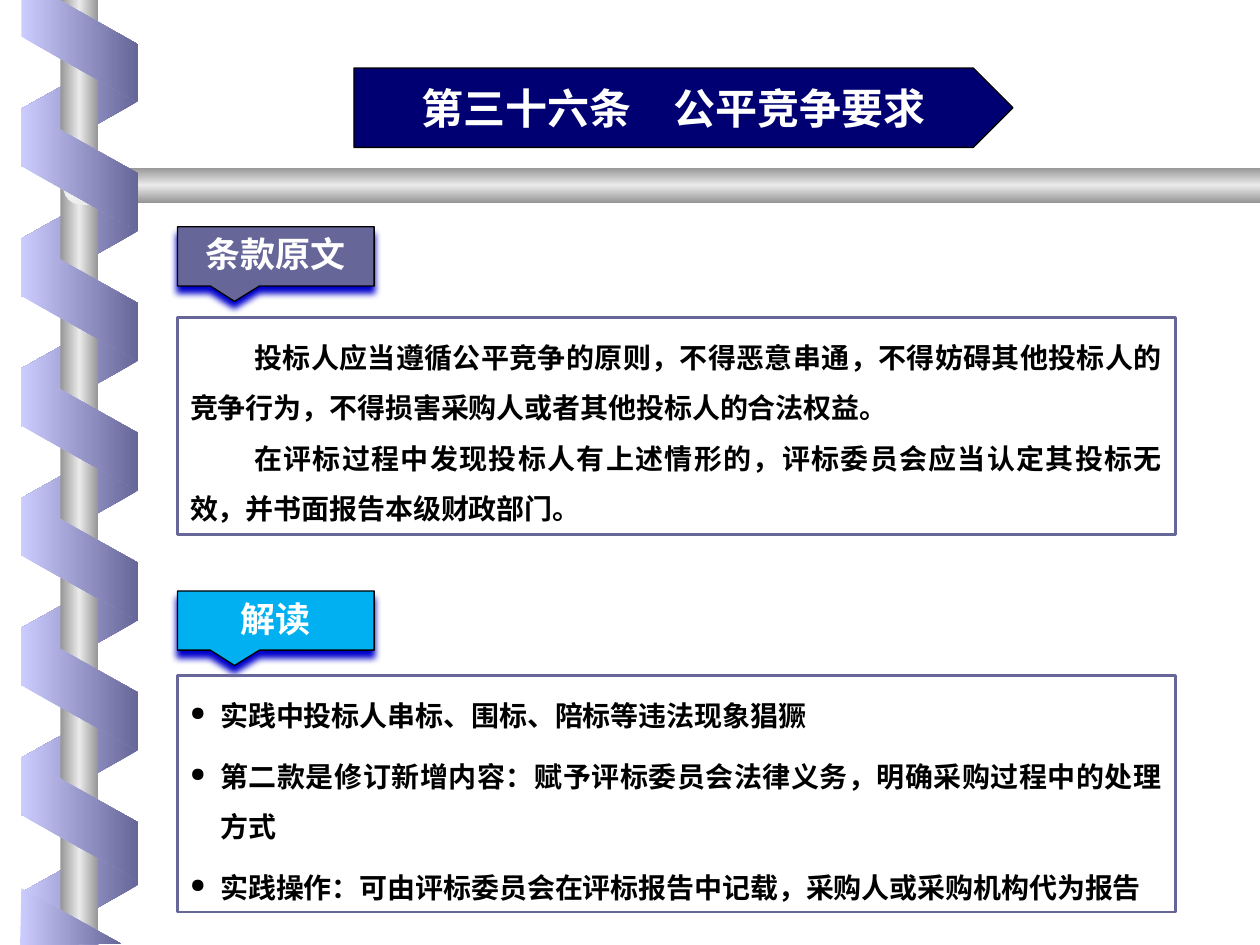
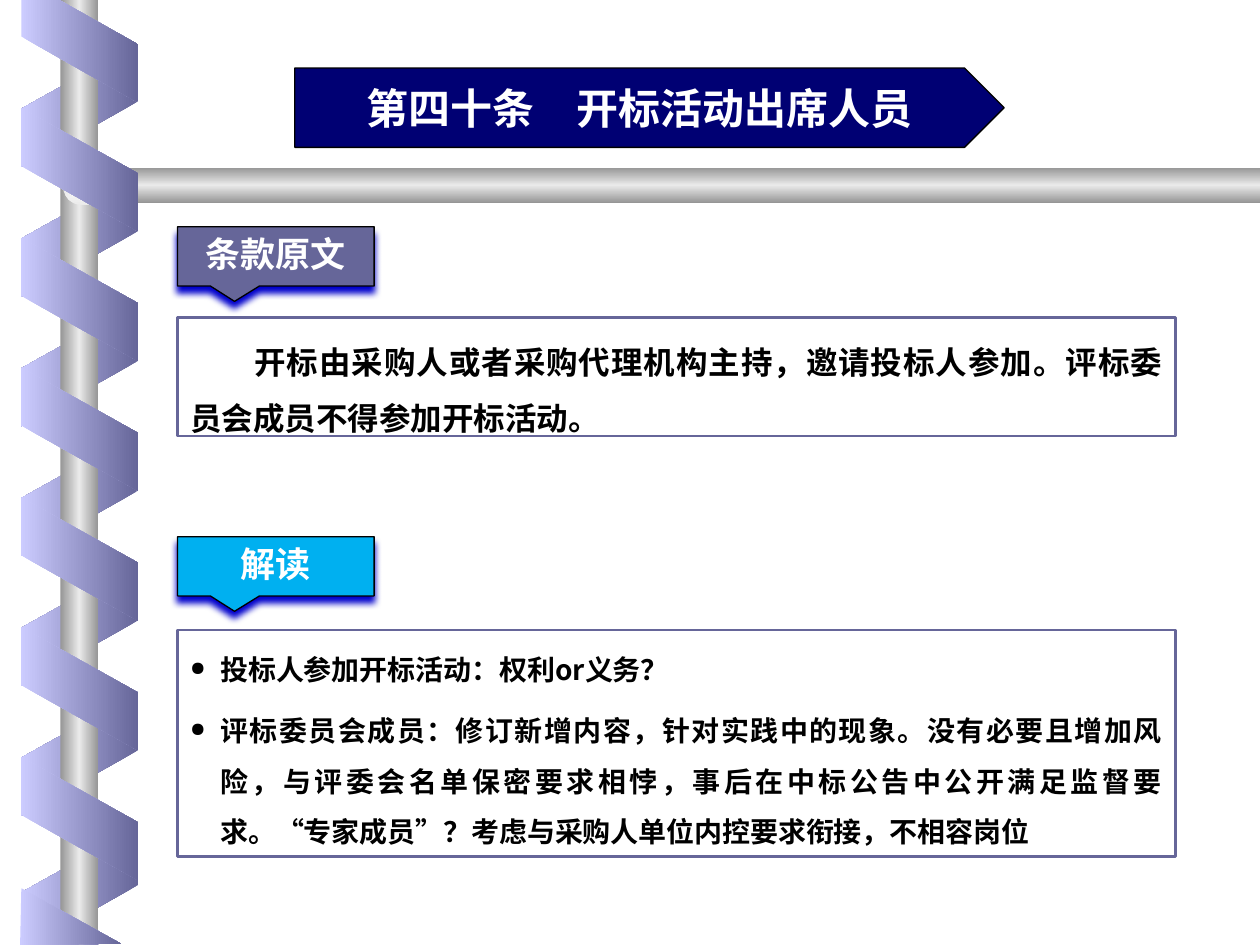
from lxml import etree
from pptx import Presentation
from pptx.dml.color import RGBColor
from pptx.enum.shapes import MSO_SHAPE
from pptx.enum.text import MSO_ANCHOR, MSO_AUTO_SIZE, PP_ALIGN
from pptx.oxml.ns import qn
from pptx.util import Inches, Pt

RECT = MSO_SHAPE.RECTANGLE
ELLIPSE = MSO_SHAPE.OVAL
PARALLELOGRAM = MSO_SHAPE.PARALLELOGRAM
ARROW_BANNER = MSO_SHAPE.PENTAGON
CALLOUT = MSO_SHAPE.RECTANGULAR_CALLOUT
TOP, MIDDLE = MSO_ANCHOR.TOP, MSO_ANCHOR.MIDDLE
CENTER, JUSTIFY = PP_ALIGN.CENTER, PP_ALIGN.JUSTIFY
GROW = MSO_AUTO_SIZE.SHAPE_TO_FIT_TEXT

CJK_FONT = "Noto Sans CJK SC"
TITLE_FONT = "Times New Roman"
WHITE, BLACK = "FFFFFF", "000000"
NAVY, PURPLE, LILAC, CYAN = "000073", "666699", "CCCCFF", "00B0F0"
SHADOW = "0000CC"
METAL = ["969696", "EAEAEA", "969696"]
PEARL = ["FEFFFF", "EAEAEA"]
FRONT_RIBBON = [LILAC, PURPLE]
BACK_RIBBON = [PURPLE, LILAC]

BOX_LEFT, BOX_WIDTH = 1.41, 7.92
RIBBON_PITCH = 1.03
RIBBON_TOP_END = [(0.17, 0), (0.17, 0.29), (1.09, 0.81), (1.09, 0.35), (0.47, 0)]
RIBBON_BOTTOM_END = [(0.96, 7.49), (0.17, 7.05), (0.16, 7.5)]


def rgb(value):
    return RGBColor.from_string(value)


def sub(parent, tag, **attrs):
    return etree.SubElement(parent, qn(tag), {k: str(v) for k, v in attrs.items()})


def gradient(sp, colors, angle=0, radial=False):
    sp.shadow.inherit = False
    sp.line.fill.background()
    sp.fill.background()
    spPr = sp._element.spPr
    grad = etree.Element(qn("a:gradFill"), rotWithShape="0")
    stops = sub(grad, "a:gsLst")
    for i, color in enumerate(colors):
        stop = sub(stops, "a:gs", pos=100000 * i // (len(colors) - 1))
        sub(stop, "a:srgbClr", val=color)
    if radial:
        center = sub(grad, "a:path", path="shape")
        sub(center, "a:fillToRect", l=50000, t=50000, r=50000, b=50000)
    else:
        sub(grad, "a:lin", ang=angle * 60000, scaled=1)
    spPr.replace(spPr.find(qn("a:noFill")), grad)


def add_shape(s, kind, left, top, width, height, adj=()):
    sp = s.shapes.add_shape(kind, Inches(left), Inches(top), Inches(width), Inches(height))
    sp.shadow.inherit = False
    for i, value in enumerate(adj):
        sp.adjustments[i] = value
    return sp


def flip(sp):
    sp._element.spPr.find(qn("a:xfrm")).set("flipH", "1")


def add_ribbon_turn(s, top, front):
    sp = add_shape(s, PARALLELOGRAM, 0.14, top, 0.98, 0.93, [0.56])
    sp.rotation = 270 if front else 90
    if not front:
        flip(sp)
    gradient(sp, FRONT_RIBBON if front else BACK_RIBBON)


def add_ribbon_end(s, points):
    corners = [(Inches(x), Inches(y)) for x, y in points]
    builder = s.shapes.build_freeform(*corners[0])
    builder.add_line_segments(corners[1:], close=True)
    gradient(builder.convert_to_shape(), FRONT_RIBBON)


def add_spiral_frame(s):
    for i in range(6):
        add_ribbon_turn(s, 0.37 + i * RIBBON_PITCH, front=False)
    add_ribbon_turn(s, 6.59, front=False)
    gradient(add_shape(s, RECT, 0.48, 0, 0.3, 7.5), METAL)
    rod = add_shape(s, ARROW_BANNER, 0.6, 1.33, 9.4, 0.28, [0.59])
    flip(rod)
    gradient(rod, METAL, 90)
    gradient(add_shape(s, ELLIPSE, 0.5, 1.33, 0.32, 0.3), PEARL, radial=True)
    for i in range(6):
        add_ribbon_turn(s, 0.88 + i * RIBBON_PITCH, front=True)
    add_ribbon_end(s, RIBBON_TOP_END)
    add_ribbon_end(s, RIBBON_BOTTOM_END)


def style(p, align, size, color, font):
    p.alignment = align
    for r in p.runs:
        r.font.size = Pt(size)
        r.font.bold = True
        r.font.name = font
        r.font.color.rgb = rgb(color)
        sub(r._r.get_or_add_rPr(), "a:ea", typeface=CJK_FONT)


def add_label(s, kind, box, adj, fill, text, size, anchor):
    sp = add_shape(s, kind, *box, adj)
    sp.fill.solid()
    sp.fill.fore_color.rgb = rgb(fill)
    sp.line.color.rgb = rgb(BLACK)
    sp.line.width = Pt(0.75)
    tf = sp.text_frame
    tf.text = text
    tf.vertical_anchor = anchor
    style(tf.paragraphs[0], CENTER, size, WHITE, TITLE_FONT)
    return sp


def add_title(s, text, left, width):
    add_label(s, ARROW_BANNER, (left, 0.54, width, 0.63), [0.5], NAVY, text, 24, MIDDLE)


def add_callout(s, text, top, fill):
    sp = add_label(s, CALLOUT, (BOX_LEFT, top, 1.56, 0.47), [-0.21, 0.76], fill, text, 20, TOP)
    effects = sp._element.spPr.find(qn("a:effectLst"))
    shadow = sub(effects, "a:outerShdw", blurRad=Pt(4), dist=Pt(4), dir=90 * 60000,
                 algn="ctr", rotWithShape=0)
    sub(shadow, "a:srgbClr", val=SHADOW)


def add_text_box(s, top, height, lines, size=16, bullets=False):
    sp = add_shape(s, RECT, BOX_LEFT, top, BOX_WIDTH, height)
    sp.fill.background()
    sp.line.color.rgb = rgb(PURPLE)
    sp.line.width = Pt(1.5)
    tf = sp.text_frame
    tf.word_wrap = True
    tf.auto_size = GROW
    tf.vertical_anchor = TOP
    tf.text = "\n".join(lines)
    for p in tf.paragraphs:
        style(p, JUSTIFY, size, BLACK, CJK_FONT)
        p.line_spacing = 1.5
        pPr = p._p.get_or_add_pPr()
        margin, indent = (0.24, -0.24) if bullets else (0, 0.51)
        pPr.set("marL", str(Inches(margin)))
        pPr.set("indent", str(Inches(indent)))
        pPr.set("hangingPunct", "0")
        if bullets:
            p.space_before = Pt(6)
            sub(pPr, "a:buSzPct", val=70000)
            sub(pPr, "a:buChar", char="●")


def add_article_slide(prs, title, title_left, title_width, clause, notes_callout_top, notes):
    s = prs.slides.add_slide(prs.slide_layouts[6])
    add_spiral_frame(s)
    add_text_box(s, 2.52, **clause)
    add_title(s, title, title_left, title_width)
    add_callout(s, "条款原文", 1.8, PURPLE)
    add_callout(s, "解读", notes_callout_top, CYAN)
    add_text_box(s, bullets=True, **notes)


def main():
    prs = Presentation()
    prs.slide_width, prs.slide_height = Inches(10), Inches(7.5)
    add_article_slide(
        prs, "第三十六条　公平竞争要求", 2.81, 5.23,
        clause=dict(height=1.72, lines=[
            "投标人应当遵循公平竞争的原则，不得恶意串通，不得妨碍其他投标人的竞争行为，不得损害采购人或者其他投标人的合法权益。",
            "在评标过程中发现投标人有上述情形的，评标委员会应当认定其投标无效，并书面报告本级财政部门。",
        ]),
        notes_callout_top=4.69,
        notes=dict(top=5.36, height=1.88, lines=[
            "实践中投标人串标、围标、陪标等违法现象猖獗",
            "第二款是修订新增内容：赋予评标委员会法律义务，明确采购过程中的处理方式",
            "实践操作：可由评标委员会在评标报告中记载，采购人或采购机构代为报告",
        ]))
    add_article_slide(
        prs, "第四十条　开标活动出席人员", 2.34, 5.63,
        clause=dict(height=0.94, size=18, lines=[
            "开标由采购人或者采购代理机构主持，邀请投标人参加。评标委员会成员不得参加开标活动。",
        ]),
        notes_callout_top=4.26,
        notes=dict(top=5, height=1.8, lines=[
            "投标人参加开标活动：权利or义务？",
            "评标委员会成员：修订新增内容，针对实践中的现象。没有必要且增加风险，与评委会名单保密要求相悖，"
            "事后在中标公告中公开满足监督要求。“专家成员”？考虑与采购人单位内控要求衔接，不相容岗位",
        ]))
    prs.save("out.pptx")


if __name__ == "__main__":
    main()
